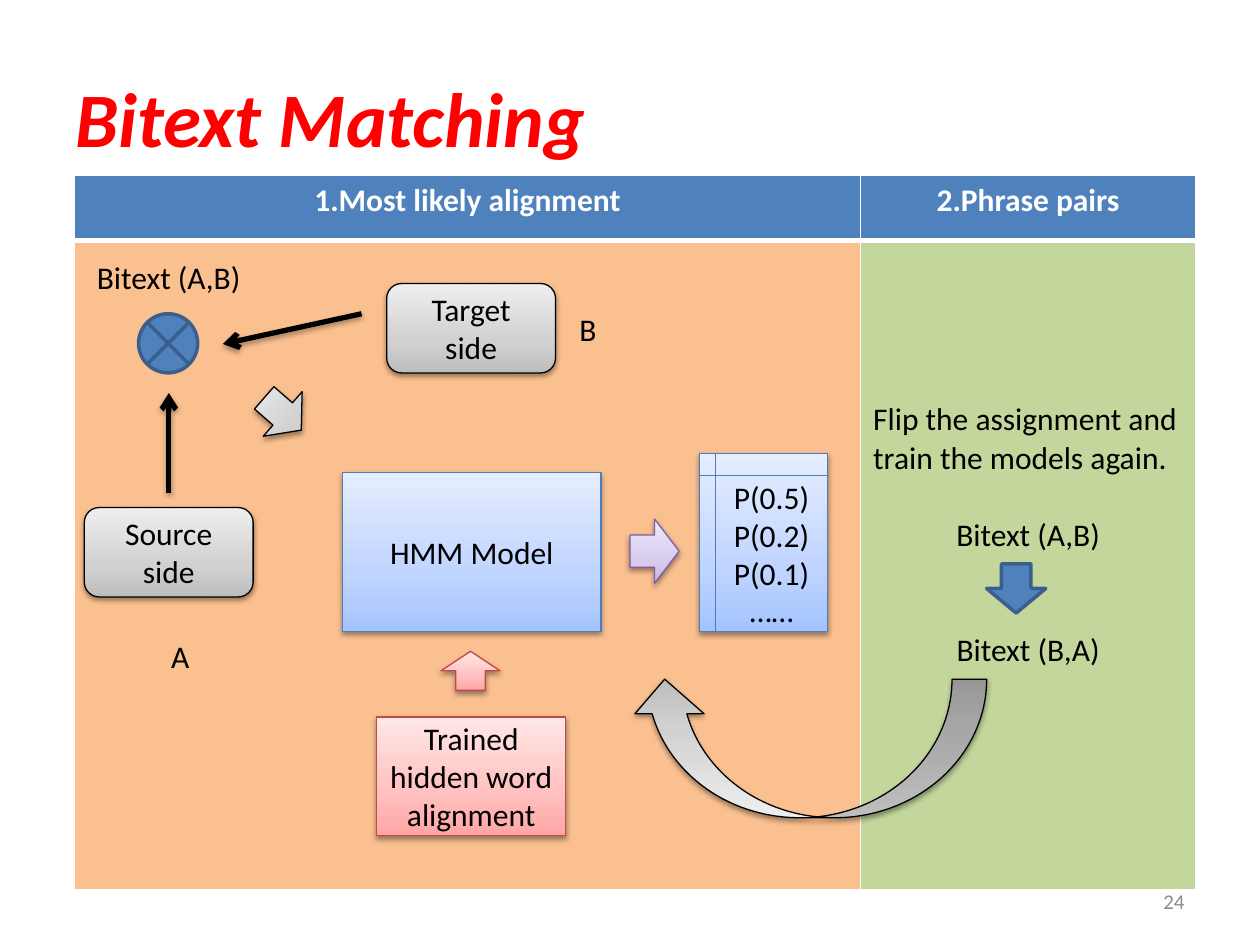
"""Build the Bitext Matching slide: a two-column table with a flow diagram on top."""
from copy import deepcopy

from lxml.etree import SubElement
from pptx import Presentation
from pptx.dml.color import RGBColor
from pptx.enum.shapes import MSO_CONNECTOR, MSO_SHAPE as SH
from pptx.enum.text import MSO_ANCHOR as ANCHOR, PP_ALIGN as AL
from pptx.oxml.ns import qn
from pptx.util import Pt


def rgb(value):
    return RGBColor.from_string(value)


def write(tf, lines, size=18, color="000000", align=AL.CENTER, anchor=ANCHOR.TOP, bold=False):
    tf.word_wrap = True
    tf.vertical_anchor = anchor
    for i, line in enumerate(lines.split("\n")):
        p = tf.paragraphs[0] if i == 0 else tf.add_paragraph()
        p.text = line
        p.alignment = align
        p.font.name, p.font.size, p.font.bold = "Calibri", Pt(size), bold
        p.font.color.rgb = rgb(color)


prs = Presentation()
prs.slide_width, prs.slide_height = Pt(720), Pt(540)
s = prs.slides.add_slide(prs.slide_layouts[6])

title = s.shapes.add_textbox(Pt(36), Pt(21.6), Pt(648), Pt(90)).text_frame
write(title, "Bitext Matching", 44, "FF0000", AL.LEFT, ANCHOR.MIDDLE, True)
title.paragraphs[0].font.italic = True

table = s.shapes.add_table(2, 2, Pt(42.5), Pt(100.2), Pt(640.8), Pt(408.2)).table
for col, width in zip(table.columns, (449.3, 191.5)):
    col.width = Pt(width)
for row, height in zip(table.rows, (37.4, 370.8)):
    row.height = Pt(height)
fills = (("4F81BD", "4F81BD"), ("FAC090", "C3D69B"))
for r in range(2):
    for c in range(2):
        cell = table.cell(r, c)
        pr = cell._tc.get_or_add_tcPr()
        for side in "LRTB":
            thick = (r, side) in ((0, "B"), (1, "T"))
            ln = SubElement(pr, qn("a:ln" + side), w=str(Pt(3 if thick else 1)))
            SubElement(SubElement(ln, qn("a:solidFill")), qn("a:srgbClr"), val="FFFFFF")
        cell.fill.solid()
        cell.fill.fore_color.rgb = rgb(fills[r][c])

for c, head in enumerate(("1.Most likely alignment", "2.Phrase pairs")):
    write(table.cell(0, c).text_frame, head, color="FFFFFF", bold=True)
cell = table.cell(1, 1)
cell.margin_top = Pt(91.5)
write(cell.text_frame, "Flip the assignment and\ntrain the models again.\nBitext (A,B)\nBitext (B,A)", align=AL.LEFT)
for p, gap in zip(cell.text_frame.paragraphs[2:], (22, 44)):
    p.alignment = AL.CENTER
    p.space_before = Pt(gap)

BLUE = ("A4C4FF", "BFD4FF", "E6EEFF", "4B7EBC")
GRAY = ("BDBDBD", "D1D1D1", "EEEEEE", "000000")
RED = ("FFA6A5", "FFC0BF", "FFE7E7", "BF4C48")
PURPLE = ("C9B5E8", "D8CBEE", "F0EAF9", "7D60A0")
SOLID = ("4F81BD", "3A5F8C")
shapes = (
    (SH.FLOWCHART_PROCESS, 195.8, 270, 147.6, 90.7, 0, BLUE, "HMM Model"),
    (SH.FLOWCHART_ALTERNATE_PROCESS, 221, 162, 96.5, 51.1, 0, GRAY, "Target side"),
    (SH.FLOWCHART_ALTERNATE_PROCESS, 48.2, 290, 96.5, 51.1, 0, GRAY, "Source side"),
    (SH.FLOWCHART_PROCESS, 215.3, 409.7, 108, 67.7, 0, RED, "Trained hidden word alignment"),
    (SH.DOWN_ARROW, 144.7, 222.5, 33.8, 28.1, 311.1, GRAY, ""),
    (SH.UP_ARROW, 252, 372.2, 33.8, 22.3, 0, RED, ""),
    (SH.FLOWCHART_SUMMING_JUNCTION, 79.2, 179.3, 33.8, 33.8, 0, SOLID, ""),
    (SH.RIGHT_ARROW, 360, 296.6, 28.1, 36.7, 0, PURPLE, ""),
    (SH.FLOWCHART_INTERNAL_STORAGE, 399.6, 259.2, 73.4, 101.5, 0, BLUE, "P(0.5)\nP(0.2)\nP(0.1)\n……"),
    (SH.DOWN_ARROW, 563.8, 322.2, 33.8, 28.1, 0, SOLID, ""),
    (SH.CURVED_DOWN_ARROW, 360, 388.1, 203.8, 79.2, 180, GRAY, ""),
)
shadowed = []
for kind, x, y, w, h, angle, colors, text in shapes:
    sp = s.shapes.add_shape(kind, Pt(x), Pt(y), Pt(w), Pt(h))
    sp.rotation = angle
    sp.shadow.inherit = False
    sp.line.color.rgb = rgb(colors[-1])
    if colors is SOLID:
        sp.fill.solid()
        sp.fill.fore_color.rgb = rgb(colors[0])
        sp.line.width = Pt(2)
    else:
        sp.fill.gradient()
        sp.fill.gradient_angle = 90
        first = sp._element.spPr.find(".//" + qn("a:gs"))
        first.addnext(deepcopy(first))
        for stop, place, color in zip(sp.fill.gradient_stops, (0, 0.35, 1), colors):
            stop.position = place
            stop.color.rgb = rgb(color)
        sp.line.width = Pt(0.75)
        shadowed.append((sp._element.spPr.find(qn("a:effectLst")), 38, 1.6))
    if text:
        write(sp.text_frame, text, anchor=ANCHOR.MIDDLE)

for x1, y1, x2, y2 in ((206.6, 179.3, 127.4, 196.6), (96.5, 281.5, 96.5, 224.6)):
    line = s.shapes.add_connector(MSO_CONNECTOR.STRAIGHT, Pt(x1), Pt(y1), Pt(x2), Pt(y2))
    line.line.color.rgb = rgb("000000")
    line.line.width = Pt(3)
    SubElement(line.line._get_or_add_ln(), qn("a:tailEnd"), type="arrow")
    shadowed.append((SubElement(line._element.spPr, qn("a:effectLst")), 35, 1.8))

for effects, opacity, dist in shadowed:
    shadow = SubElement(effects, qn("a:outerShdw"), blurRad=str(Pt(3.1)), dist=str(Pt(dist)),
                        dir="5400000", rotWithShape="0")
    color = SubElement(shadow, qn("a:srgbClr"), val="000000")
    SubElement(color, qn("a:alpha"), val=str(opacity * 1000))

labels = (
    ("Bitext (A,B)", 48.2, 144, 96.5, AL.CENTER),
    ("B", 324, 173.5, 51.1, AL.LEFT),
    ("A", 65.5, 360.7, 74.9, AL.CENTER),
)
for text, x, y, w, align in labels:
    write(s.shapes.add_textbox(Pt(x), Pt(y), Pt(w), Pt(28.8)).text_frame, text, align=align)

number = s.shapes.add_textbox(Pt(516.2), Pt(500.4), Pt(167.8), Pt(28.8))
write(number.text_frame, "24", 12, "8C8C8C", AL.RIGHT, ANCHOR.MIDDLE)

prs.save("out.pptx")
